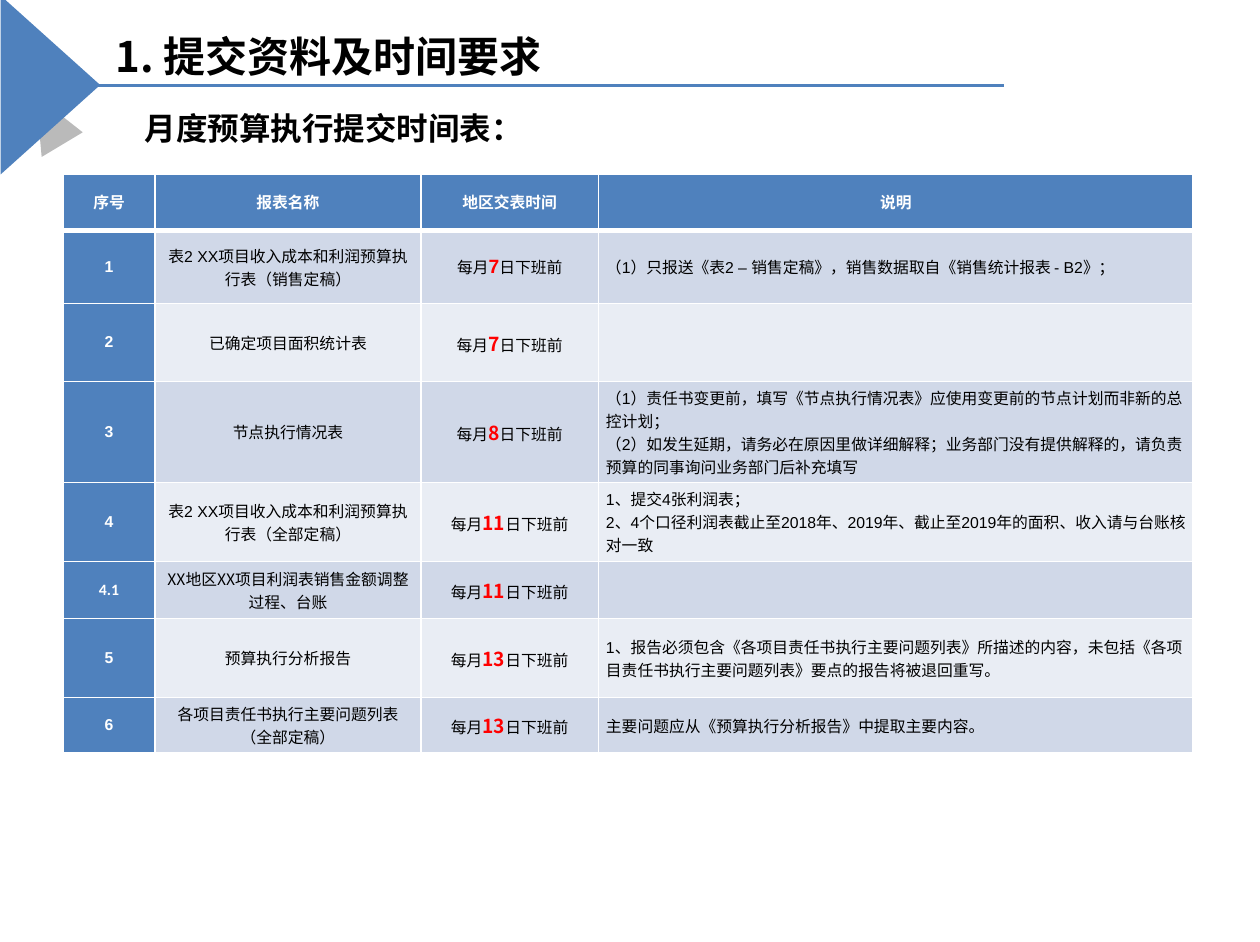
from dataclasses import dataclass

from lxml import etree
from pptx import Presentation
from pptx.dml.color import RGBColor
from pptx.enum.shapes import MSO_CONNECTOR, MSO_SHAPE
from pptx.enum.text import MSO_ANCHOR, PP_ALIGN
from pptx.oxml.ns import qn
from pptx.util import Inches, Pt

TRIANGLE = MSO_SHAPE.ISOSCELES_TRIANGLE
STRAIGHT = MSO_CONNECTOR.STRAIGHT
MIDDLE = MSO_ANCHOR.MIDDLE
CENTER, LEFT = PP_ALIGN.CENTER, PP_ALIGN.LEFT


@dataclass(frozen=True)
class Theme:
    blue: str = "4F81BD"
    band_dark: str = "D0D8E8"
    band_light: str = "E9EDF4"
    white: str = "FFFFFF"
    black: str = "000000"
    red: str = "FF0000"
    grey: str = "404040"
    latin: str = "Arial"
    number: str = "Calibri"
    chinese: str = "Noto Sans CJK SC"
    title: int = 24
    subtitle: int = 18
    body: int = 9
    day: int = 11


THEME = Theme()
TITLE = "1. 提交资料及时间要求"
SUBTITLE = "月度预算执行提交时间表："
HEADERS = ["序号", "报表名称", "地区交表时间", "说明"]
REPORTS = [
    ("1", "表2 XX项目收入成本和利润预算执行表（销售定稿）", "7",
     ["（1）只报送《表2 – 销售定稿》，销售数据取自《销售统计报表 - B2》；"]),
    ("2", "已确定项目面积统计表", "7", []),
    ("3", "节点执行情况表", "8",
     ["（1）责任书变更前，填写《节点执行情况表》应使用变更前的节点计划而非新的总控计划；",
      "（2）如发生延期，请务必在原因里做详细解释；业务部门没有提供解释的，请负责预算的同事询问业务部门后补充填写"]),
    ("4", "表2 XX项目收入成本和利润预算执行表（全部定稿）", "11",
     ["1、提交4张利润表；",
      "2、4个口径利润表截止至2018年、2019年、截止至2019年的面积、收入请与台账核对一致"]),
    ("4.1", "XX地区XX项目利润表销售金额调整过程、台账", "11", []),
    ("5", "预算执行分析报告", "13",
     ["1、报告必须包含《各项目责任书执行主要问题列表》所描述的内容，未包括《各项目责任书执行主要问题列表》要点的报告将被退回重写。"]),
    ("6", "各项目责任书执行主要问题列表（全部定稿）", "13",
     ["主要问题应从《预算执行分析报告》中提取主要内容。"]),
]
COLUMN_WIDTHS = [0.73, 2.11, 1.41, 4.72]
ROW_HEIGHTS = [0.45, 0.58, 0.62, 0.8, 0.63, 0.45, 0.63, 0.44]
LATIN_FONTS = {("1", "day"): THEME.latin, ("4.1", "number"): THEME.number,
               ("4.1", "name"): THEME.chinese}


def inches(values):
    return [Inches(value) for value in values]


def format_run(run, size, color, bold=False, font=THEME.latin):
    run.font.size = Pt(size)
    run.font.bold = bold
    run.font.name = font
    run.font.color.rgb = RGBColor.from_string(color)
    east_asian = etree.SubElement(run.font._element, qn("a:ea"))
    east_asian.set("typeface", THEME.chinese)


def add_triangle(slide, box, rotation, peak, color, opacity=None):
    triangle = slide.shapes.add_shape(TRIANGLE, *inches(box))
    triangle.rotation = rotation
    triangle.adjustments[0] = peak
    triangle.shadow.inherit = False
    triangle.line.fill.background()
    triangle.fill.solid()
    triangle.fill.fore_color.rgb = RGBColor.from_string(color)
    if opacity is not None:
        tint = triangle._element.spPr.find(".//" + qn("a:srgbClr"))
        etree.SubElement(tint, qn("a:alpha")).set("val", str(opacity * 1000))


def add_rule(slide, ends):
    rule = slide.shapes.add_connector(STRAIGHT, *inches(ends))
    rule.line.color.rgb = RGBColor.from_string(THEME.blue)
    rule.line.width = Pt(2)
    etree.SubElement(rule._element.spPr, qn("a:effectLst"))


def add_heading(slide, box, text, size, margins):
    frame = slide.shapes.add_textbox(*inches(box)).text_frame
    frame.word_wrap = True
    frame.margin_left = frame.margin_right = Inches(margins[0])
    frame.margin_top = frame.margin_bottom = Inches(margins[1])
    frame.text = text
    format_run(frame.paragraphs[0].runs[0], size, THEME.black, True, THEME.chinese)


def style_cell(cell, color, bottom_width=1):
    cell.fill.solid()
    cell.fill.fore_color.rgb = RGBColor.from_string(color)
    cell.vertical_anchor = MIDDLE
    cell.margin_left = cell.margin_right = Inches(0.06)
    cell.margin_top = cell.margin_bottom = 0
    properties = cell._tc.get_or_add_tcPr()
    for position, side in enumerate("LRTB"):
        width = bottom_width if side == "B" else 1
        border = etree.Element(qn(f"a:ln{side}"), w=str(Pt(width)))
        fill = etree.SubElement(border, qn("a:solidFill"))
        etree.SubElement(fill, qn("a:srgbClr")).set("val", THEME.white)
        properties.insert(position, border)


def write_cell(cell, lines, color, bold=False, alignment=CENTER, font=THEME.latin):
    cell.text_frame.text = "\n".join(lines)
    for paragraph in cell.text_frame.paragraphs:
        paragraph.alignment = alignment
        paragraph.font.size = Pt(THEME.body)
        for run in paragraph.runs:
            format_run(run, THEME.body, color, bold, font)


def write_deadline(cell, day, day_font):
    paragraph = cell.text_frame.paragraphs[0]
    paragraph.alignment = CENTER
    parts = [("每月", THEME.body, THEME.black, False, THEME.latin),
             (day, THEME.day, THEME.red, True, day_font),
             ("日下班前", THEME.body, THEME.black, False, THEME.latin)]
    for text, *style in parts:
        run = paragraph.add_run()
        run.text = text
        format_run(run, *style)


def add_schedule(slide):
    box = inches([0.5, 1.38, sum(COLUMN_WIDTHS), sum(ROW_HEIGHTS)])
    table = slide.shapes.add_table(len(ROW_HEIGHTS), len(COLUMN_WIDTHS), *box).table
    for column, width in zip(table.columns, COLUMN_WIDTHS):
        column.width = Inches(width)
    for row, height in zip(table.rows, ROW_HEIGHTS):
        row.height = Inches(height)
    for cell, header in zip(table.rows[0].cells, HEADERS):
        style_cell(cell, THEME.blue, 3)
        write_cell(cell, [header], THEME.white, True)
    for index, (number, name, day, notes) in enumerate(REPORTS, 1):
        cells = list(table.rows[index].cells)
        band = THEME.band_dark if index % 2 else THEME.band_light
        for column, cell in enumerate(cells):
            style_cell(cell, band if column else THEME.blue)
        write_cell(cells[0], [number], THEME.white, True,
                   font=LATIN_FONTS.get((number, "number"), THEME.latin))
        write_cell(cells[1], [name], THEME.black,
                   font=LATIN_FONTS.get((number, "name"), THEME.latin))
        write_deadline(cells[2], day, LATIN_FONTS.get((number, "day"), THEME.chinese))
        write_cell(cells[3], notes, THEME.black, alignment=LEFT)


def main():
    """Build the monthly budget submission schedule slide."""
    presentation = Presentation()
    presentation.slide_width, presentation.slide_height = inches([10, 7.48])
    slide = presentation.slides.add_slide(presentation.slide_layouts[6])
    add_triangle(slide, [0.19, 0.74, 0.38, 0.44], 329, 0.56, THEME.grey, 36)
    add_triangle(slide, [-0.31, 0.28, 1.42, 0.79], 90, 0.5, THEME.blue)
    add_rule(slide, [0.77, 0.68, 7.97, 0.68])
    add_heading(slide, [0.85, 0.2, 6.04, 0.48], TITLE, THEME.title, (0.07, 0.04))
    add_schedule(slide)
    add_heading(slide, [1.05, 0.82, 3.94, 0.4], SUBTITLE, THEME.subtitle, (0.1, 0.05))
    presentation.save("out.pptx")


if __name__ == "__main__":
    main()
